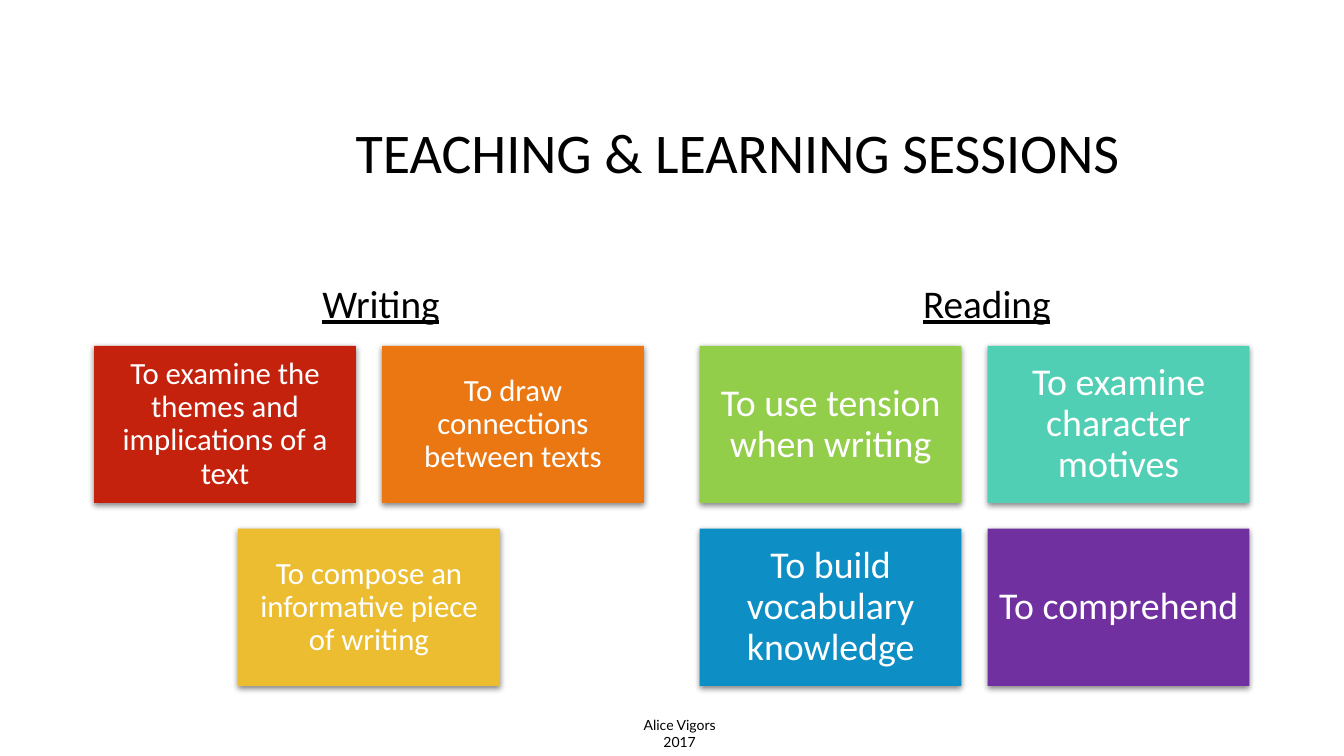
from dataclasses import dataclass

from lxml import etree
from pptx import Presentation
from pptx.dml import color
from pptx.enum import shapes, text
from pptx.oxml import ns
from pptx.util import Pt


@dataclass(frozen=True)
class Theme:
    font: str = "Calibri"
    footer_font: str = "Lato"
    ink: str = "000000"
    paper: str = "FFFFFF"
    red: str = "C4220D"
    orange: str = "EB7712"
    yellow: str = "ECBD31"
    green: str = "92CE4A"
    teal: str = "50CFB4"
    blue: str = "0D8EC5"
    purple: str = "7030A0"
    title_size: float = 40
    heading_size: float = 28
    writing_size: float = 22
    reading_size: float = 27
    footer_size: float = 10


THEME = Theme()
CARD_WIDTH, CARD_HEIGHT = 187, 112.3
COLUMN_STEP, ROW_STEP = 205.7, 130.7
CARDS_TOP = 247


@dataclass(frozen=True)
class Label:
    words: str
    left: float
    top: float
    width: float
    height: float
    size: float
    anchor: text.MSO_ANCHOR = text.MSO_ANCHOR.MIDDLE
    font: str = THEME.font
    underline: bool = False
    line_spacing: float = 0.9


@dataclass(frozen=True)
class Card:
    words: str
    fill: str


@dataclass(frozen=True)
class Section:
    heading: Label
    left: float
    size: float
    inset: float
    rows: tuple[tuple[Card, ...], ...]


def heading(words: str, left: float, width: float) -> Label:
    return Label(words, left, 172, width, 65, THEME.heading_size,
                 text.MSO_ANCHOR.BOTTOM, underline=True)


TITLE = Label("TEACHING & LEARNING SESSIONS", 147, 60, 759.6, 102, THEME.title_size)
FOOTER = Label("Alice Vigors 2017", 447, 508.3, 77, 31.7, THEME.footer_size,
               text.MSO_ANCHOR.TOP, THEME.footer_font, line_spacing=1)
SECTIONS = (
    Section(heading("Writing", 72, 400.3), 67.2, THEME.writing_size, 6.6, (
        (Card("To examine the themes and implications of a text", THEME.red),
         Card("To draw connections between texts", THEME.orange)),
        (Card("To compose an informative piece of writing", THEME.yellow),),
    )),
    Section(heading("Reading", 504, 401.8), 499.8, THEME.reading_size, 8.1, (
        (Card("To use tension when writing", THEME.green),
         Card("To examine character motives", THEME.teal)),
        (Card("To build vocabulary knowledge", THEME.blue),
         Card("To comprehend", THEME.purple)),
    )),
)


def write(frame, words: str, font: str, size: float, ink: str,
          anchor: text.MSO_ANCHOR, line_spacing: float):
    frame.word_wrap = True
    frame.vertical_anchor = anchor
    para = frame.paragraphs[0]
    para.text = words
    para.alignment = text.PP_ALIGN.CENTER
    para.line_spacing = line_spacing
    para.font.name = font
    para.font.size = Pt(size)
    para.font.color.rgb = color.RGBColor.from_string(ink)
    return para


def draw_label(page, label: Label) -> None:
    box = page.shapes.add_textbox(
        Pt(label.left), Pt(label.top), Pt(label.width), Pt(label.height))
    para = write(box.text_frame, label.words, label.font, label.size, THEME.ink,
                 label.anchor, label.line_spacing)
    if label.underline:
        para.font.underline = True


def add_shadow(box) -> None:
    box.shadow.inherit = False
    effects = box._element.spPr.find(ns.qn("a:effectLst"))
    shadow = etree.SubElement(
        effects, ns.qn("a:outerShdw"), blurRad=str(Pt(4.5)), dist=str(Pt(1.5)),
        dir="5400000", algn="ctr", rotWithShape="0")
    tint = etree.SubElement(shadow, ns.qn("a:srgbClr"), val=THEME.ink)
    etree.SubElement(tint, ns.qn("a:alpha"), val="48000")


def draw_card(page, card: Card, left: float, top: float, section: Section) -> None:
    box = page.shapes.add_shape(
        shapes.MSO_SHAPE.RECTANGLE, Pt(left), Pt(top), Pt(CARD_WIDTH), Pt(CARD_HEIGHT))
    box.fill.solid()
    box.fill.fore_color.rgb = color.RGBColor.from_string(card.fill)
    box.line.fill.background()
    add_shadow(box)
    frame = box.text_frame
    frame.margin_left = frame.margin_right = Pt(section.inset)
    frame.margin_top = frame.margin_bottom = Pt(section.inset)
    write(frame, card.words, THEME.font, section.size, THEME.paper,
          text.MSO_ANCHOR.MIDDLE, 0.9)


def draw_section(page, section: Section) -> None:
    draw_label(page, section.heading)
    columns = max(len(row) for row in section.rows)
    for row_index, row in enumerate(section.rows):
        row_left = section.left + (columns - len(row)) * COLUMN_STEP / 2
        for column_index, card in enumerate(row):
            draw_card(page, card, row_left + column_index * COLUMN_STEP,
                      CARDS_TOP + row_index * ROW_STEP, section)


def main() -> None:
    deck = Presentation()
    deck.slide_width, deck.slide_height = Pt(960), Pt(540)
    page = deck.slides.add_slide(deck.slide_layouts[6])
    page.background.fill.solid()
    page.background.fill.fore_color.rgb = color.RGBColor.from_string(THEME.paper)
    draw_label(page, TITLE)
    for section in SECTIONS:
        draw_section(page, section)
    draw_label(page, FOOTER)
    deck.save("out.pptx")


if __name__ == "__main__":
    main()
